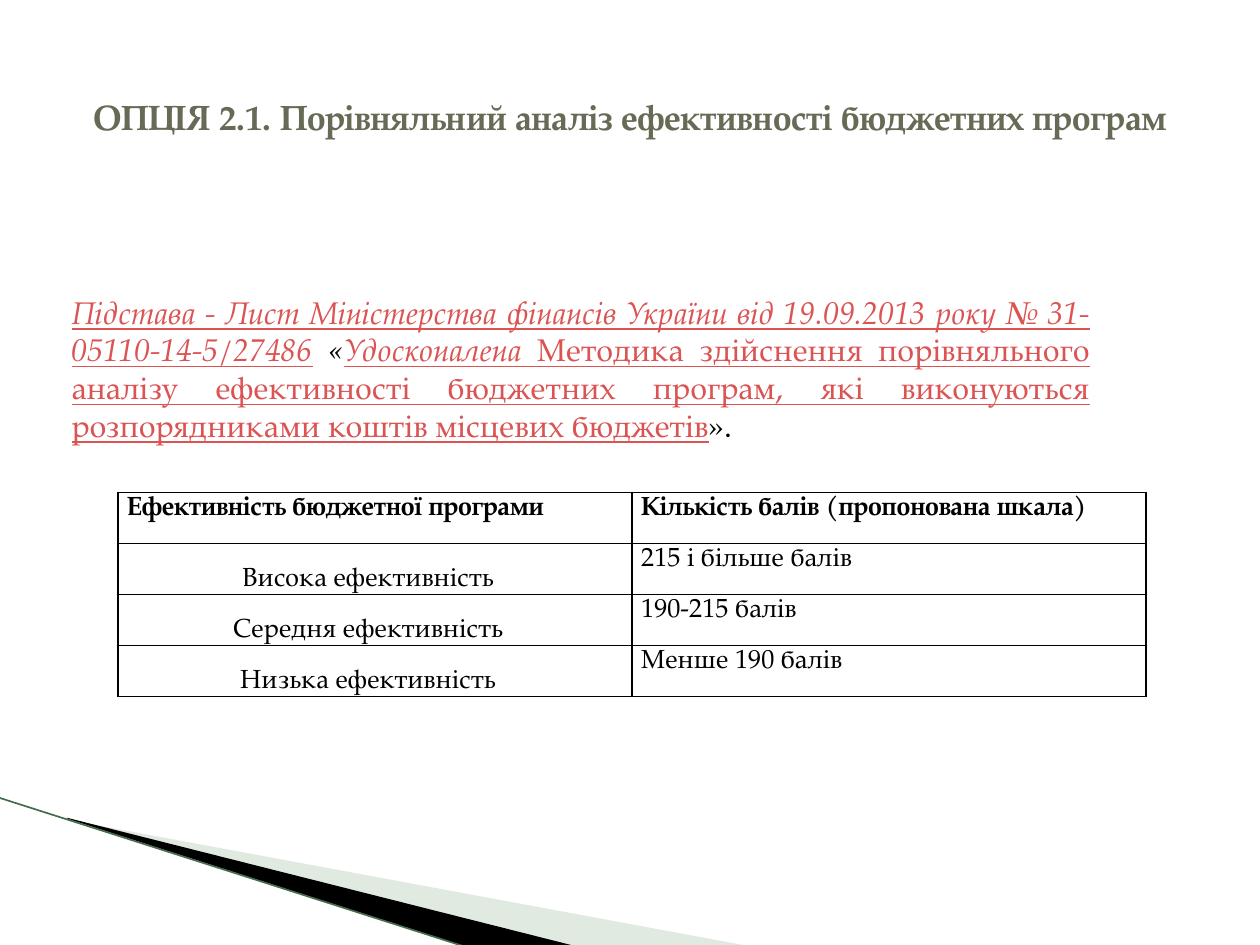
"""Builds the slide on comparing the efficiency of budget programmes."""
import pptx
import pptx.dml.color
import pptx.enum.shapes
import pptx.enum.text
import pptx.oxml
import pptx.oxml.ns
import pptx.util
import lxml.etree

Pt = pptx.util.Pt
RGBColor = pptx.dml.color.RGBColor
Align = pptx.enum.text.PP_ALIGN
Anchor = pptx.enum.text.MSO_ANCHOR
qn = pptx.oxml.ns.qn

FONT = "TeX Gyre Pagella"
BLACK = RGBColor(0x00, 0x00, 0x00)
OLIVE = RGBColor(0x67, 0x6A, 0x55)
RED = RGBColor(0xDB, 0x53, 0x53)
PALE_GREEN = RGBColor(0xB3, 0xCB, 0xB5)
DARK_GREEN = RGBColor(0x47, 0x6B, 0x4B)

TITLE = "ОПЦІЯ 2.1. Порівняльний аналіз ефективності бюджетних програм"
BASIS = [
    ("Підстава - Лист Міністерства фінансів України від 19.09.2013 року № 31-05110-14-5/27486", RED, True),
    (" «", BLACK, True),
    ("Удосконалена ", RED, True),
    ("Методика здійснення порівняльного аналізу ефективності бюджетних програм, "
     "які виконуються розпорядниками коштів місцевих бюджетів", RED, False),
    ("».", BLACK, False),
]
SCALE = [
    ("Ефективність бюджетної програми", "Кількість балів (пропонована шкала)"),
    ("Висока ефективність", "215 і більше балів"),
    ("Середня ефективність", "190-215 балів"),
    ("Низька ефективність", "Менше 190 балів"),
]
WEDGES = [
    ((56.4, 393.9, 299.4, 113.6),
     [(39.3, 468.6), (428.4, 540.7), (328.2, 540.7), (39.4, 468.1)], PALE_GREEN, 40),
    ((-4.2, 455.8, 299.4, 66),
     [(38.2, 467.3), (329, 540.7), (267.8, 541.4), (38.9, 468)], BLACK, 100),
]
EDGE = (-0.7, 455.8, 267.1, 541.4)
TABLE_LEFT, TABLE_TOP, COLUMN_WIDTH, ROW_HEIGHT = 67.5, 281.3, 293.7, 29.16
CELL_INSET, SCORE_SHIFT = 5.2, 8


def style(run, size, color, bold=False, italic=False, underline=False):
    font = run.font
    font.name, font.size, font.color.rgb = FONT, Pt(size), color
    font.bold, font.italic, font.underline = bold, italic, underline


def set_frame(wedge, frame):
    left, top, width, height = map(Pt, frame)
    outline = wedge._element.find(".//" + qn("a:path"))
    for corner in outline.iter(qn("a:pt")):
        corner.set("x", str(int(corner.get("x")) + wedge.left - left))
        corner.set("y", str(int(corner.get("y")) + wedge.top - top))
    outline.set("w", str(int(width)))
    outline.set("h", str(int(height)))
    wedge.left, wedge.top, wedge.width, wedge.height = left, top, width, height


def add_wedge(shapes, frame, points, color, opacity):
    corners = [(Pt(x), Pt(y)) for x, y in points]
    builder = shapes.build_freeform(*corners[0], scale=1.0)
    builder.add_line_segments(corners[1:])
    wedge = builder.convert_to_shape()
    set_frame(wedge, frame)
    wedge.shadow.inherit = False
    wedge.fill.solid()
    wedge.fill.fore_color.rgb = color
    wedge.line.fill.background()
    if opacity < 100:
        tint = wedge.fill._xPr.find(".//" + qn("a:srgbClr"))
        lxml.etree.SubElement(tint, qn("a:alpha")).set("val", str(opacity * 1000))


def add_edge(shapes):
    edge = shapes.add_connector(pptx.enum.shapes.MSO_CONNECTOR.STRAIGHT, *map(Pt, EDGE))
    edge.line.color.rgb = DARK_GREEN
    edge.line.width = Pt(0.95)
    lxml.etree.SubElement(edge._element.spPr, qn("a:effectLst"))


def add_title(shapes):
    title = shapes.title
    title.left, title.top, title.width, title.height = map(Pt, (36, 21.6, 648, 90))
    title.text_frame.text = TITLE
    title.text_frame.vertical_anchor = Anchor.MIDDLE
    heading = title.text_frame.paragraphs[0]
    heading.alignment = Align.CENTER
    style(heading.runs[0], 20, OLIVE, bold=True)


def add_basis(shapes):
    frame = shapes.add_textbox(*map(Pt, (33.8, 163.2, 596.2, 94.3))).text_frame
    frame.word_wrap = True
    frame.vertical_anchor = Anchor.MIDDLE
    basis = frame.paragraphs[0]
    basis.alignment = Align.JUSTIFY
    for text, color, italic in BASIS:
        run = basis.add_run()
        run.text = text
        style(run, 18, color, italic=italic, underline=color == RED)


def add_borders(cell):
    properties = cell._tc.get_or_add_tcPr()
    for index, side in enumerate(("lnL", "lnR", "lnT", "lnB")):
        border = pptx.oxml.parse_xml(
            f'<a:{side} xmlns:a="http://schemas.openxmlformats.org/drawingml/2006/main" w="12700">'
            f'<a:solidFill><a:srgbClr val="{BLACK}"/></a:solidFill></a:{side}>')
        properties.insert(index, border)


def add_scale(shapes):
    size = (COLUMN_WIDTH * len(SCALE[0]), ROW_HEIGHT * len(SCALE))
    table = shapes.add_table(len(SCALE), len(SCALE[0]), *map(Pt, (TABLE_LEFT, TABLE_TOP, *size))).table
    for r, row in enumerate(SCALE):
        table.rows[r].height = Pt(ROW_HEIGHT)
        for c, text in enumerate(row):
            is_level = r > 0 and c == 0
            cell = table.cell(r, c)
            cell.fill.background()
            cell.margin_left = Pt(CELL_INSET)
            cell.margin_right = Pt(CELL_INSET + (SCORE_SHIFT if is_level else 0))
            cell.margin_top = cell.margin_bottom = 0
            cell.vertical_anchor = Anchor.BOTTOM if is_level else Anchor.TOP
            cell.text_frame.text = text
            entry = cell.text_frame.paragraphs[0]
            entry.alignment = Align.CENTER if is_level else Align.JUSTIFY
            entry.line_spacing = 1.15
            style(entry.runs[0], 15, BLACK, bold=r == 0)
            add_borders(cell)


def main():
    deck = pptx.Presentation()
    deck.slide_width, deck.slide_height = Pt(720), Pt(540)
    shapes = deck.slides.add_slide(deck.slide_layouts[5]).shapes
    for wedge in WEDGES:
        add_wedge(shapes, *wedge)
    add_edge(shapes)
    add_title(shapes)
    add_basis(shapes)
    add_scale(shapes)
    deck.save("out.pptx")


if __name__ == "__main__":
    main()
